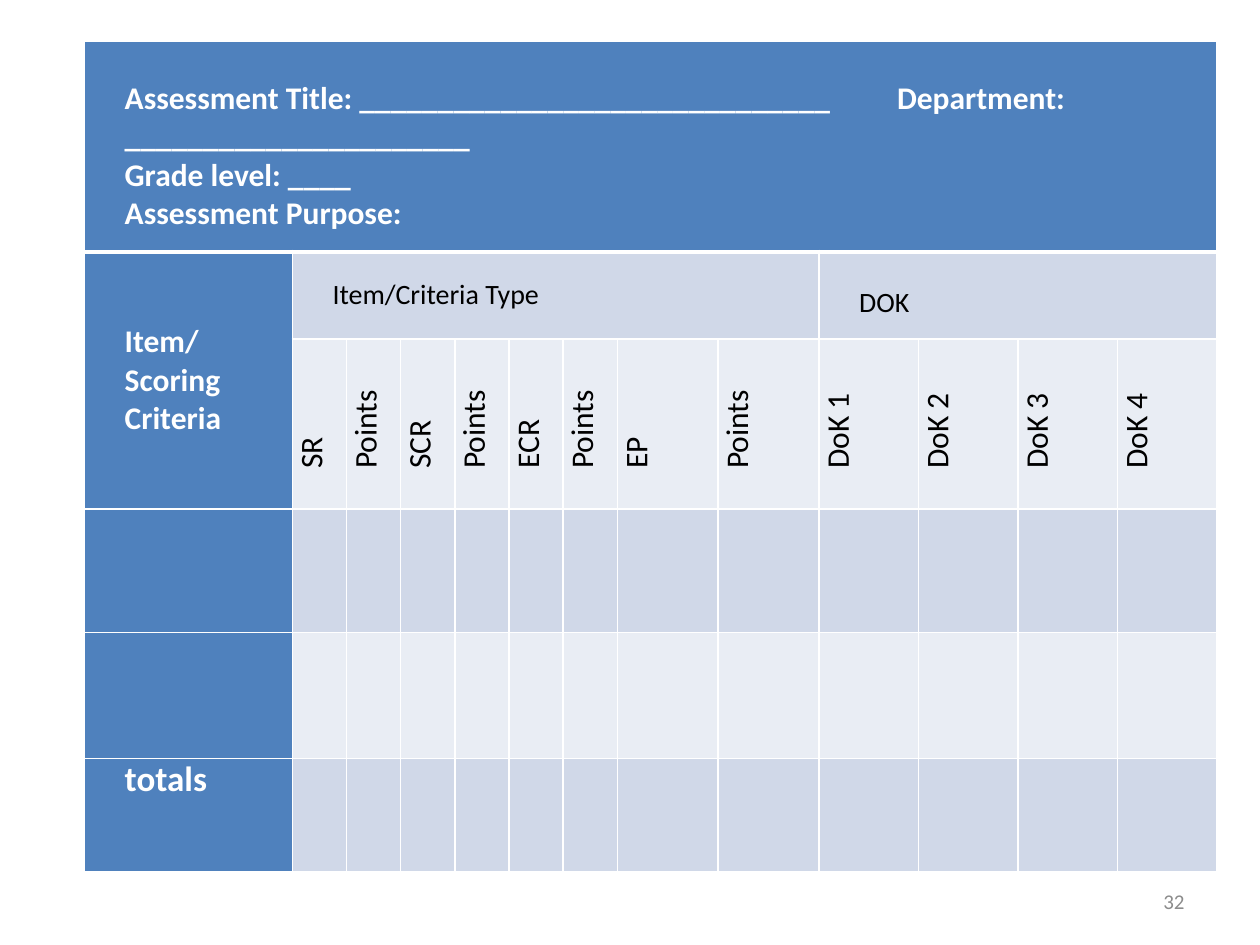
from dataclasses import dataclass

import pptx
import pptx.dml.color
import pptx.enum.text
import pptx.oxml
import pptx.oxml.ns
import pptx.util
from pptx.util import Inches

ANCHOR = pptx.enum.text.MSO_ANCHOR
COLORS = {
    "header": "4F81BD",
    "dark_band": "D0D8E8",
    "light_band": "E9EDF4",
    "white": "FFFFFF",
    "black": "000000",
    "number": "8C8C8C",
}
COLUMN_WIDTHS = [1.65] + [0.43] * 6 + [0.8] * 2 + [0.79] * 4
ROW_HEIGHTS = [1.67, 0.69, 1.35, 0.98, 1, 0.9]
ITEM_LABELS = ["SR", "Points", "SCR", "Points", "ECR", "Points", "EP", "Points"]
DOK_LABELS = [f"DoK {level}" for level in range(1, 5)]
DEPARTMENT_TAB = 6.13


@dataclass
class Entry:
    row: int
    column: int
    lines: list[str]
    size: int = 18
    color: str = "black"
    bold: bool = False
    anchor: ANCHOR = ANCHOR.MIDDLE
    top: float = 0
    rows: int = 1
    columns: int = 1
    vertical: bool = False


ENTRIES = [
    Entry(0, 0, [
        "Assessment Title: " + "_" * 30 + "\tDepartment: " + "_" * 22,
        "Grade level: " + "_" * 4,
        "Assessment Purpose:",
    ], color="white", bold=True, anchor=ANCHOR.TOP, top=0.3, columns=13),
    Entry(1, 0, ["Item/", "Scoring Criteria"], color="white", bold=True, rows=2),
    Entry(1, 1, ["Item/Criteria Type"], size=16, columns=8),
    Entry(1, 9, ["DOK"], size=16, anchor=ANCHOR.TOP, top=0.27, columns=4),
    Entry(5, 0, ["totals"], size=20, color="white", bold=True, anchor=ANCHOR.TOP),
] + [
    Entry(2, column, [label], vertical=True)
    for column, label in enumerate(ITEM_LABELS + DOK_LABELS, start=1)
]


def rgb(name: str) -> pptx.dml.color.RGBColor:
    return pptx.dml.color.RGBColor.from_string(COLORS[name])


def apply_format(target, values: dict) -> None:
    for name, value in values.items():
        setattr(target, name, value)


def format_font(font, size: int, color: str, bold: bool = False) -> None:
    apply_format(font, {"name": "Calibri", "size": pptx.util.Pt(size), "bold": bold})
    font.color.rgb = rgb(color)


def set_borders(cell, widths: dict[str, float]) -> None:
    properties = cell._tc.get_or_add_tcPr()
    for index, (side, width) in enumerate(widths.items()):
        line = pptx.oxml.parse_xml(
            f'<a:ln{side} {pptx.oxml.ns.nsdecls("a")} w="{pptx.util.Pt(width)}">'
            f'<a:solidFill><a:srgbClr val="{COLORS["white"]}"/></a:solidFill>'
            f"</a:ln{side}>"
        )
        properties.insert(index, line)


def add_tab(paragraph, position: float) -> None:
    tabs = pptx.oxml.parse_xml(
        f'<a:tabLst {pptx.oxml.ns.nsdecls("a")}>'
        f'<a:tab pos="{Inches(position)}" algn="l"/></a:tabLst>'
    )
    paragraph._p.get_or_add_pPr().append(tabs)


def style_cell(cell, row: int, column: int) -> None:
    if row == 0 or column == 0:
        color = "header"
    else:
        color = "dark_band" if row % 2 else "light_band"
    cell.fill.solid()
    cell.fill.fore_color.rgb = rgb(color)
    set_borders(cell, {
        "L": 1,
        "R": 1,
        "T": 3 if row == 1 else 1,
        "B": 3 if row == 0 else 1,
    })


def write_entry(table, entry: Entry) -> None:
    cell = table.cell(entry.row, entry.column)
    if entry.rows * entry.columns > 1:
        cell.merge(table.cell(entry.row + entry.rows - 1,
                              entry.column + entry.columns - 1))
    apply_format(cell, {
        "margin_left": Inches(0.07),
        "margin_right": Inches(0.07),
        "margin_top": Inches(entry.top),
        "margin_bottom": 0,
        "vertical_anchor": entry.anchor,
    })
    properties = cell._tc.get_or_add_tcPr()
    if entry.vertical:
        properties.set("vert", "vert270")
    cell.text_frame.text = "\n".join(entry.lines)
    for paragraph in cell.text_frame.paragraphs:
        paragraph._p.get_or_add_pPr().set("marL", str(Inches(0.25)))
        if "\t" in paragraph.text:
            add_tab(paragraph, DEPARTMENT_TAB)
        for run in paragraph.runs:
            format_font(run.font, entry.size, entry.color, entry.bold)


def add_blueprint_table(slide) -> None:
    table = slide.shapes.add_table(
        len(ROW_HEIGHTS), len(COLUMN_WIDTHS), Inches(0.67), Inches(0.33),
        Inches(sum(COLUMN_WIDTHS)), Inches(sum(ROW_HEIGHTS)),
    ).table
    for column, width in zip(table.columns, COLUMN_WIDTHS):
        column.width = Inches(width)
    for row, height in zip(table.rows, ROW_HEIGHTS):
        row.height = Inches(height)
    for row in range(len(ROW_HEIGHTS)):
        for column in range(len(COLUMN_WIDTHS)):
            style_cell(table.cell(row, column), row, column)
    for entry in ENTRIES:
        write_entry(table, entry)


def add_slide_number(slide, number: str) -> None:
    shape = slide.shapes.add_textbox(Inches(7.17), Inches(6.95), Inches(2.33), Inches(0.4))
    apply_format(shape.text_frame, {"word_wrap": True, "vertical_anchor": ANCHOR.MIDDLE})
    paragraph = shape.text_frame.paragraphs[0]
    paragraph.alignment = pptx.enum.text.PP_ALIGN.RIGHT
    run = paragraph.add_run()
    run.text = number
    format_font(run.font, 12, "number")


def main() -> None:
    presentation = pptx.Presentation()
    apply_format(presentation, {"slide_width": Inches(10), "slide_height": Inches(7.5)})
    # Blank layout: the slide has no title
    slide = presentation.slides.add_slide(presentation.slide_layouts[6])
    add_slide_number(slide, "32")
    add_blueprint_table(slide)
    presentation.save("out.pptx")


if __name__ == "__main__":
    main()
